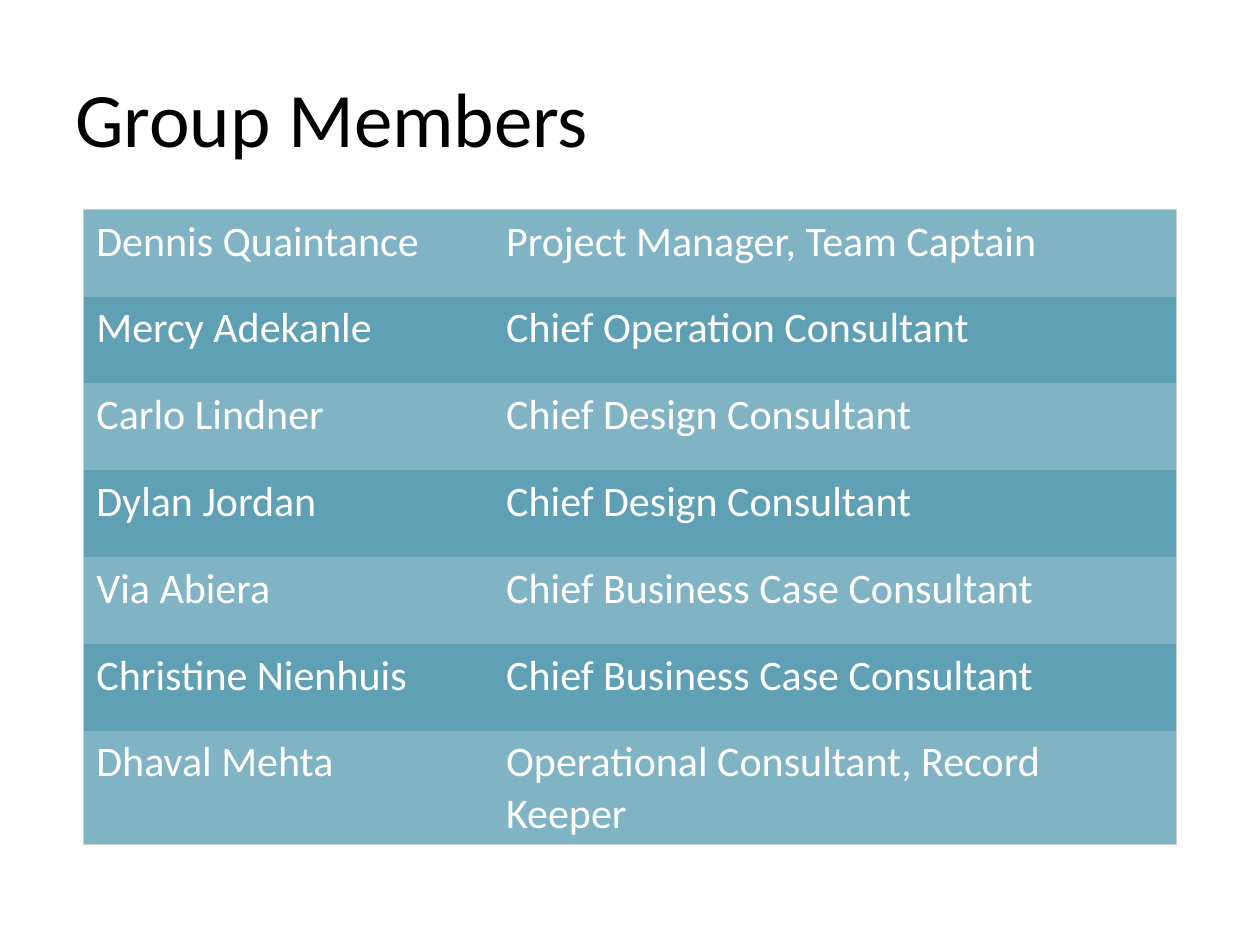
from lxml import etree
from pptx import Presentation
from pptx import util as u
from pptx.dml import color
from pptx.enum import text
from pptx.oxml import ns

# Content
TITLE = "Group Members"
MEMBERS = [
    ("Dennis Quaintance", "Project Manager, Team Captain"),
    ("Mercy Adekanle", "Chief Operation Consultant"),
    ("Carlo Lindner", "Chief Design Consultant"),
    ("Dylan Jordan", "Chief Design Consultant"),
    ("Via Abiera", "Chief Business Case Consultant"),
    ("Christine Nienhuis", "Chief Business Case Consultant"),
    ("Dhaval Mehta", "Operational Consultant, Record Keeper"),
]
FONT = "Calibri"
BANDS = ["80B3C4", "5FA0B5"]
BORDER = "C3D1D8"
COL_WIDTHS = [8.26, 13.76]
ROW_HEIGHT = 1.75


def rgb(value):
    return color.RGBColor.from_string(value)


def add_run(p, words, size, ink):
    r = p.add_run()
    r.text = words
    r.font.name = FONT
    r.font.size = u.Pt(size)
    r.font.color.rgb = rgb(ink)


def set_border(cell, side, visible):
    ln = etree.SubElement(cell._tc.get_or_add_tcPr(), ns.qn(f"a:ln{side}"))
    ln.set("w", str(u.Pt(0.75)))
    if visible:
        fill = etree.SubElement(ln, ns.qn("a:solidFill"))
        etree.SubElement(fill, ns.qn("a:srgbClr")).set("val", BORDER)
    else:
        etree.SubElement(ln, ns.qn("a:noFill"))


prs = Presentation()
prs.slide_width, prs.slide_height = u.Cm(25.4), u.Cm(19.05)
s = prs.slides.add_slide(prs.slide_layouts[6])

# Title
box = s.shapes.add_textbox(u.Cm(1.27), u.Cm(0.76), u.Cm(22.86), u.Cm(3.18))
tf = box.text_frame
tf.word_wrap = True
tf.vertical_anchor = text.MSO_ANCHOR.MIDDLE
add_run(tf.paragraphs[0], TITLE, 44, "000000")

# Member table: banded rows, outer border only
n_rows, n_cols = len(MEMBERS), len(COL_WIDTHS)
table = s.shapes.add_table(n_rows, n_cols, u.Cm(1.69), u.Cm(4.23),
                           u.Cm(sum(COL_WIDTHS)), u.Cm(ROW_HEIGHT * n_rows)).table
for col, width in zip(table.columns, COL_WIDTHS):
    col.width = u.Cm(width)

for i, member in enumerate(MEMBERS):
    table.rows[i].height = u.Cm(ROW_HEIGHT)
    for j, words in enumerate(member):
        cell = table.cell(i, j)
        outer = {"L": j == 0, "R": j == n_cols - 1,
                 "T": i == 0, "B": i == n_rows - 1}
        for side, visible in outer.items():
            set_border(cell, side, visible)
        cell.fill.solid()
        cell.fill.fore_color.rgb = rgb(BANDS[i % 2])
        add_run(cell.text_frame.paragraphs[0], words, 24, "FFFFFF")

prs.save("out.pptx")
